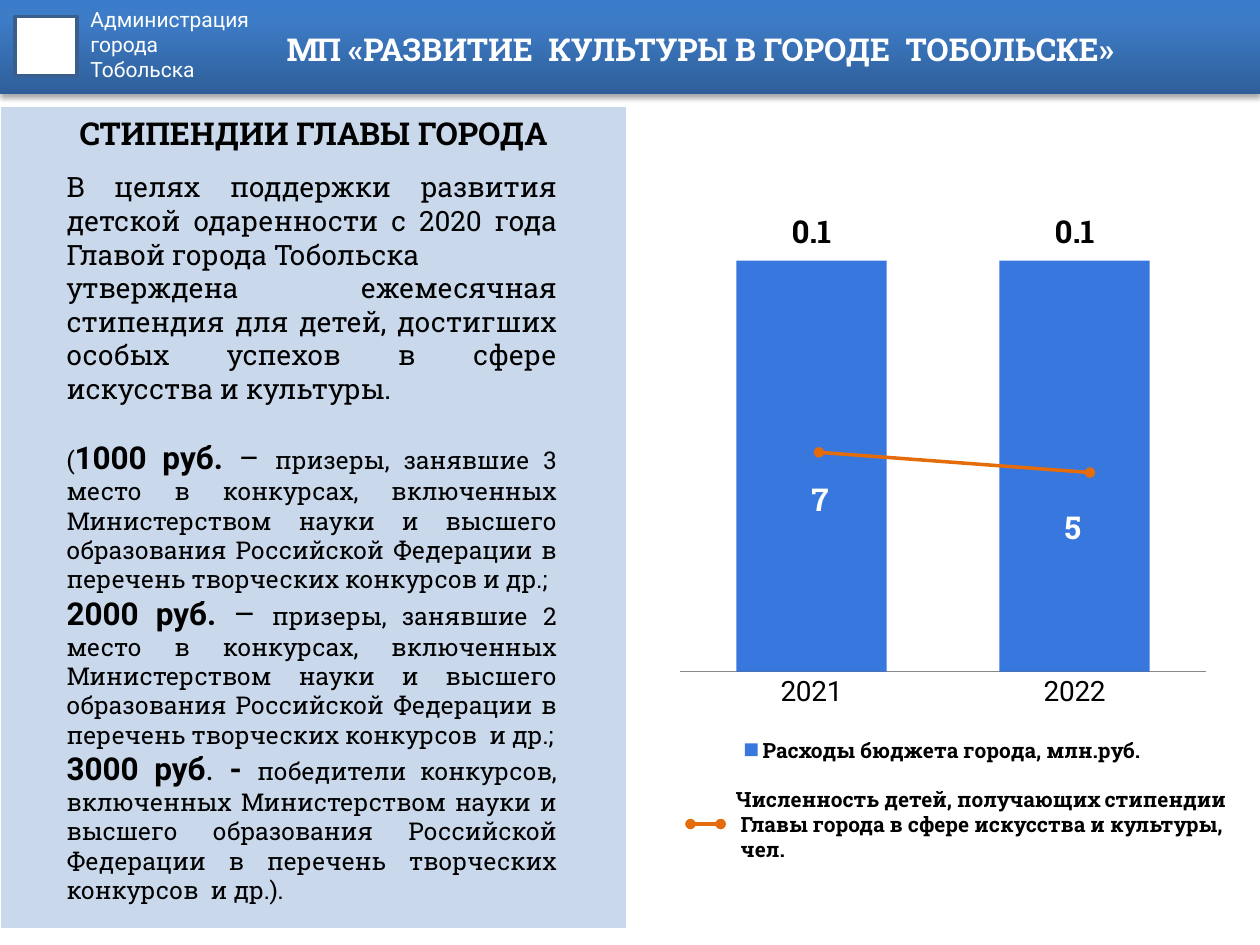
from lxml import etree
from pptx import Presentation
from pptx.chart.data import CategoryChartData
from pptx.dml.color import RGBColor
from pptx.enum.chart import XL_CHART_TYPE, XL_LABEL_POSITION, XL_LEGEND_POSITION, XL_TICK_MARK
from pptx.enum.shapes import MSO_CONNECTOR, MSO_SHAPE
from pptx.enum.text import MSO_ANCHOR, PP_ALIGN
from pptx.oxml import parse_xml
from pptx.oxml.ns import nsdecls, qn
from pptx.util import Inches, Pt

STACKED = XL_CHART_TYPE.COLUMN_STACKED
INSIDE_END = XL_LABEL_POSITION.INSIDE_END
BOTTOM = XL_LEGEND_POSITION.BOTTOM
NO_TICK = XL_TICK_MARK.NONE
STRAIGHT = MSO_CONNECTOR.STRAIGHT
RECTANGLE = MSO_SHAPE.RECTANGLE
TOP, MIDDLE = MSO_ANCHOR.TOP, MSO_ANCHOR.MIDDLE
LEFT, CENTER, JUSTIFY = PP_ALIGN.LEFT, PP_ALIGN.CENTER, PP_ALIGN.JUSTIFY

BLACK = RGBColor(0x00, 0x00, 0x00)
WHITE = RGBColor(0xFF, 0xFF, 0xFF)
FRAME = RGBColor(0x3A, 0x5F, 0x8C)
PANEL = RGBColor(0xB9, 0xCD, 0xE5)
BAR = RGBColor(0x17, 0x61, 0xD9)
AXIS = RGBColor(0x88, 0x88, 0x88)
ORANGE = RGBColor(0xE4, 0x6C, 0x0A)
HEADER_STOPS = [(0, "2F5F99"), (80, "3D7CC7"), (100, "3A7CCB")]

SANS, SLAB = "Roboto", "Roboto Slab"
COLUMNS, ROWS = 100, 75  # grid of the 10 x 7.5 inch slide


def set_alpha(fill, percent):
    etree.SubElement(fill.find(qn("a:srgbClr")), qn("a:alpha"), val=str(percent * 1000))


def manual_layout(**values):
    items = "".join(f'<c:{name} val="{value}"/>' for name, value in values.items())
    return parse_xml(f'<c:layout {nsdecls("c")}><c:manualLayout>{items}'
                     '</c:manualLayout></c:layout>')


class Page:
    def __init__(self, deck):
        self.slide = deck.slides.add_slide(deck.slide_layouts[6])
        self.column = deck.slide_width / COLUMNS
        self.row = deck.slide_height / ROWS

    def place(self, left, top, width, height):
        return (round(left * self.column), round(top * self.row),
                round(width * self.column), round(height * self.row))

    def style(self, font, size, color=BLACK, bold=False, name=SLAB):
        font.size, font.bold, font.name = Pt(size), bold, name
        font.color.rgb = color

    def rectangle(self, area, fill, line=None):
        box = self.slide.shapes.add_shape(RECTANGLE, *self.place(*area))
        box.shadow.inherit = False
        box.fill.solid()
        box.fill.fore_color.rgb = fill
        if line is None:
            box.line.fill.background()
        else:
            box.line.color.rgb, box.line.width = line, Pt(2)
        return box

    def header(self, area):
        properties = self.rectangle(area, WHITE).element.spPr
        stops = "".join(f'<a:gs pos="{position * 1000}"><a:srgbClr val="{color}"/></a:gs>'
                        for position, color in HEADER_STOPS)
        gradient = parse_xml(f'<a:gradFill {nsdecls("a")}><a:gsLst>{stops}</a:gsLst>'
                             '<a:lin ang="16200000" scaled="0"/></a:gradFill>')
        properties.replace(properties.find(qn("a:solidFill")), gradient)
        shadow = etree.SubElement(properties.find(qn("a:effectLst")), qn("a:outerShdw"),
                                  blurRad=str(Pt(3.1)), dist=str(Pt(1.8)),
                                  dir="5400000", rotWithShape="0")
        color = etree.SubElement(shadow, qn("a:srgbClr"), val="000000")
        etree.SubElement(color, qn("a:alpha"), val="35000")

    def add_paragraphs(self, frame, paragraphs, align=LEFT):
        """Each paragraph is a list of (text, style) spans."""
        for index, spans in enumerate(paragraphs):
            para = frame.paragraphs[0] if index == 0 else frame.add_paragraph()
            para.alignment = align
            for text, style in spans:
                span = para.add_run()
                span.text = text
                self.style(span.font, **style)

    def text(self, area, paragraphs, align=LEFT, anchor=TOP, wrap=True):
        frame = self.slide.shapes.add_textbox(*self.place(*area)).text_frame
        frame.word_wrap, frame.vertical_anchor = wrap, anchor
        self.add_paragraphs(frame, paragraphs, align)
        return frame

    def table(self, area, heading):
        holder = self.slide.shapes.add_table(1, 2, *self.place(*area))
        table = holder.table
        table.first_row = table.horz_banding = False
        for cell, fill in zip(table.iter_cells(), (PANEL, WHITE)):
            cell.fill.solid()
            cell.fill.fore_color.rgb = fill
        cells = list(holder.element.iter(qn("a:tcPr")))
        set_alpha(cells[0].find(qn("a:solidFill")), 76)
        for properties in cells:
            for index, (side, width) in enumerate((("L", 1), ("R", 1), ("T", 1), ("B", 3))):
                properties.insert(index, parse_xml(
                    f'<a:ln{side} {nsdecls("a")} w="{Pt(width)}"><a:solidFill>'
                    f'<a:srgbClr val="FFFFFF"/></a:solidFill></a:ln{side}>'))
        self.add_paragraphs(table.cell(0, 0).text_frame, [heading], CENTER)

    def chart(self, area, name, categories, values):
        data = CategoryChartData()
        data.categories = categories
        data.add_series(name, values)
        chart = self.slide.shapes.add_chart(STACKED, *self.place(*area), data).chart
        self.style(chart.font, 18, name=SANS)
        chart.has_title = False
        chart.has_legend = True
        chart.legend.position, chart.legend.include_in_layout = BOTTOM, False
        self.style(chart.legend.font, 12, bold=True)

        axis = chart.category_axis
        axis.major_tick_mark = axis.minor_tick_mark = NO_TICK
        axis.format.line.color.rgb = AXIS
        self.style(axis.tick_labels.font, 16, name=SANS)
        scale = chart.value_axis
        scale.visible = scale.has_major_gridlines = False
        scale.minimum_scale, scale.maximum_scale = 0, max(values)

        plot = chart.plots[0]
        plot.gap_width, plot.overlap, plot.vary_by_categories = 75, 100, False
        series = plot.series[0]
        series.format.fill.solid()
        series.format.fill.fore_color.rgb = BAR
        region = next(plot_area for plot_area in chart.element.iter(qn("c:plotArea")))
        bars = next(region.iter(qn("c:ser")))
        set_alpha(bars.find(qn("c:spPr")).find(qn("a:solidFill")), 86)
        for index in range(len(values)):
            label = series.points[index].data_label
            self.style(label.font, 18, bold=True)
            label.position = INSIDE_END

        # Labels are lifted above the bars
        for label in bars.iter(qn("c:dLbl")):
            label.find(qn("c:idx")).addnext(manual_layout(x=0, y=-0.09))
        for layout in region.findall(qn("c:layout")):
            region.remove(layout)
        region.insert(0, manual_layout(layoutTarget="inner", xMode="edge", yMode="edge",
                                       x=0.02, y=0.16, w=0.96, h=0.68))

    def dotted_line(self, left, top, right, bottom):
        line = self.slide.shapes.add_connector(STRAIGHT, *self.place(left, top, right, bottom))
        line.line.color.rgb, line.line.width = ORANGE, Pt(2)
        properties = line.element.spPr
        for end in ("headEnd", "tailEnd"):
            etree.SubElement(properties.find(qn("a:ln")), qn(f"a:{end}"), type="oval")
        etree.SubElement(properties, qn("a:effectLst"))


def main():
    deck = Presentation()
    deck.slide_width, deck.slide_height = Inches(10), Inches(7.5)
    page = Page(deck)
    body, small = dict(size=16), dict(size=14)
    plain, amount = dict(size=18), dict(size=18, bold=True, name=SANS)
    sans = dict(size=18, name=SANS)
    heading = dict(size=18, bold=True)
    white = dict(size=18, bold=True, color=WHITE)
    legend = dict(size=12, bold=True)

    # Header
    page.header((0, 0, 100, 7.5))
    page.rectangle((1.2, 1.3, 4.9, 4.7), WHITE, FRAME)
    office = dict(size=12, name=SANS, color=WHITE)
    page.text((6.2, 0, 23.4, 9.1),
              [[(line, office)] for line in ("Администрация", "города", "Тобольска")])
    page.text((20.3, 0.7, 70.6, 6.3),
              [[("МП «РАЗВИТИЕ  КУЛЬТУРЫ В ГОРОДЕ  ТОБОЛЬСКЕ»", white)]], CENTER, MIDDLE)

    # Scholarship panel
    page.table((0, 8.4, 99.5, 65.4), [("СТИПЕНДИИ ГЛАВЫ ГОРОДА", heading)])
    contests = ("включенных Министерством науки и высшего образования "
                "Российской Федерации в перечень творческих конкурсов")
    frame = page.text((4.3, 13, 40.9, 59.9), [
        [("В целях поддержки развития детской одаренности с 2020 года "
          "Главой города Тобольска ", body)],
        [("утверждена ежемесячная стипендия для детей, достигших особых успехов "
          "в сфере искусства и культуры.", body)],
        [("(", small), ("1000 руб. ", amount), ("– ", sans),
         (f"призеры, занявшие 3 место в конкурсах, {contests} и др.;", small)],
        [("2000 руб. ", amount), ("– ", plain),
         (f"призеры, занявшие 2 место в конкурсах, {contests}  и др.;", small)],
        [("3000 руб", amount), (".", sans), (" - ", amount),
         (f"победители конкурсов, {contests}  и др.).", small)],
    ], JUSTIFY)
    frame.paragraphs[2].space_before = Pt(19)

    # Spending chart with the number of children over it
    page.chart((53.1, 13, 43.5, 48), "Расходы бюджета города, млн.руб.",
               ["2021", "2022"], [0.1, 0.1])
    page.text((63.4, 37.6, 5.1, 4), [[("7", white)]])
    page.text((83.5, 39.8, 6, 4), [[("5", white)]])
    page.text((57.4, 61.9, 41, 7.1), [[(line, legend)] for line in (
        "Численность детей, получающих стипендии",
        " Главы города в сфере искусства и культуры,", " чел.")], wrap=False)
    page.dotted_line(65, 35.9, 86.5, 37.5)
    page.dotted_line(54.8, 65.4, 57.2, 65.4)

    deck.save("out.pptx")


if __name__ == "__main__":
    main()
